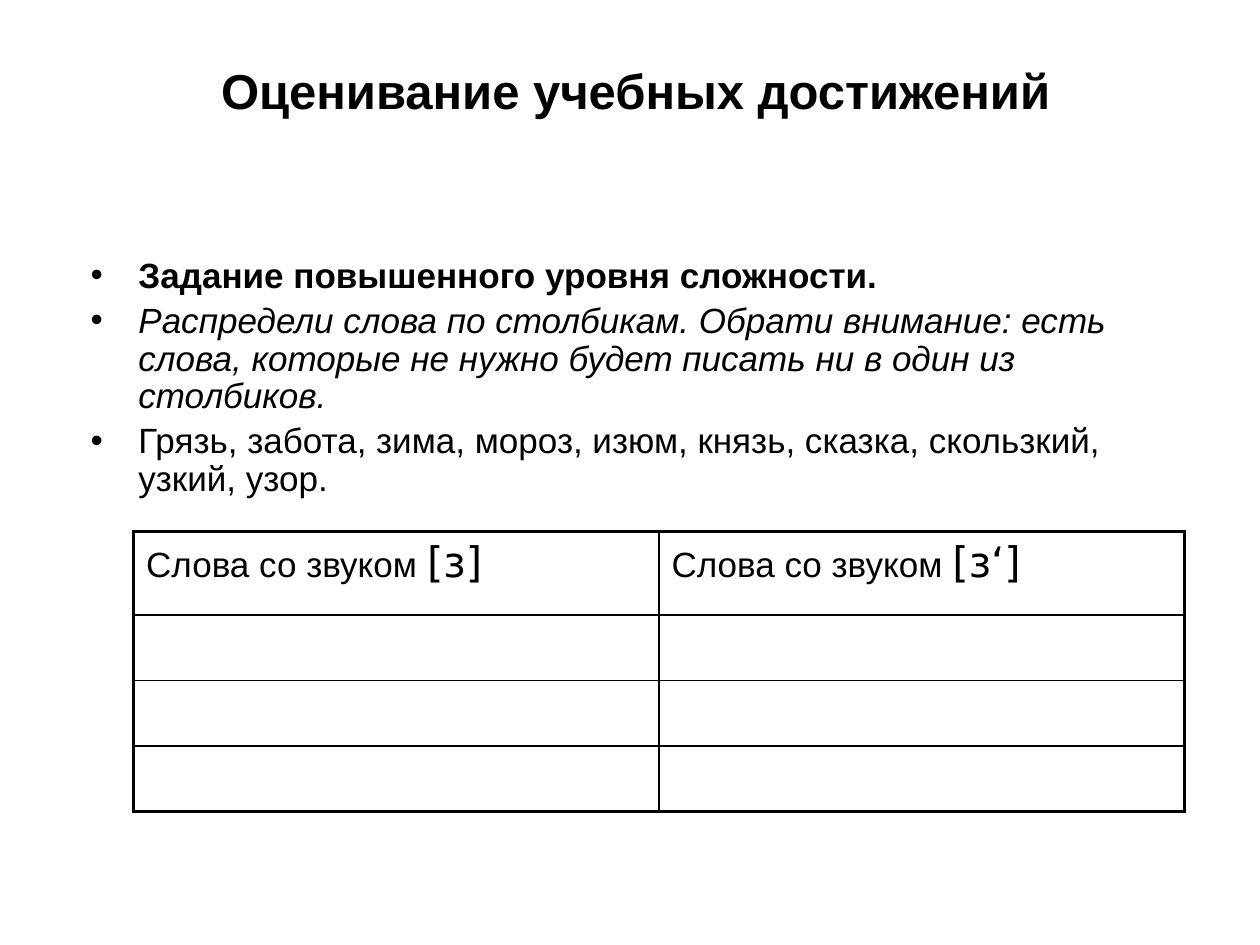
from lxml.etree import SubElement
from pptx import Presentation
from pptx.dml.color import RGBColor
from pptx.enum.text import MSO_ANCHOR, PP_ALIGN
from pptx.oxml.ns import qn
from pptx.util import Inches, Pt

BLACK = RGBColor(0, 0, 0)
TITLE = "Оценивание учебных достижений"
TASKS = [
    ("Задание повышенного уровня сложности.", True, False),
    ("Распредели слова по столбикам. Обрати внимание: есть слова, "
     "которые не нужно будет писать ни в один из столбиков.", False, True),
    ("Грязь, забота, зима, мороз, изюм, князь, сказка, скользкий, "
     "узкий, узор.", False, False),
]
HEADS = ["[з]", "[з‘]"]
LABEL = "Слова со звуком "
ROWS = [0.66, 0.52, 0.52, 0.52]
COL = 4.17
THICK, THIN = 2.25, 1


def style(font, size, name="Arial", bold=False, italic=False):
    font.size, font.name = Pt(size), name
    font.bold, font.italic = bold, italic
    font.color.rgb = BLACK


def add_box(left, top, width, height):
    box = slide.shapes.add_textbox(*map(Inches, (left, top, width, height)))
    box.text_frame.word_wrap = True
    return box.text_frame


def add_bullet(para):
    props = para._p.get_or_add_pPr()
    props.set("marL", str(Inches(0.38)))
    props.set("indent", str(-Inches(0.38)))
    SubElement(props, qn("a:buFont"), typeface="Arial")
    SubElement(props, qn("a:buChar"), char="•")


def add_edges(cell, row, col):
    outer = {"lnL": col == 0, "lnR": col == len(HEADS) - 1,
             "lnT": row == 0, "lnB": row == len(ROWS) - 1}
    props = cell._tc.get_or_add_tcPr()
    for index, (tag, edge) in enumerate(outer.items()):
        width = Pt(THICK if edge else THIN)
        line = props.makeelement(qn("a:" + tag), {"w": str(width)})
        fill = SubElement(line, qn("a:solidFill"))
        SubElement(fill, qn("a:srgbClr"), val=str(BLACK))
        props.insert(index, line)


deck = Presentation()
deck.slide_width, deck.slide_height = Inches(10), Inches(7.5)
slide = deck.slides.add_slide(deck.slide_layouts[6])

head = add_box(0.67, 0.36, 8.75, 0.71)
head.vertical_anchor = MSO_ANCHOR.MIDDLE
head.text = TITLE
head.paragraphs[0].alignment = PP_ALIGN.CENTER
style(head.paragraphs[0].runs[0].font, 28, bold=True)

body = add_box(0.62, 2, 8.75, 2.1)
body.text = "\n".join(text for text, _, _ in TASKS)
for index, (para, (_, bold, italic)) in enumerate(zip(body.paragraphs, TASKS)):
    add_bullet(para)
    para.line_spacing = 0.9
    para.space_before = Pt(4 if index else 0)
    style(para.runs[0].font, 20, bold=bold, italic=italic)

frame = slide.shapes.add_table(
    len(ROWS), len(HEADS), Inches(1.06), Inches(4.22),
    Inches(COL * len(HEADS)), Inches(sum(ROWS)))
table = frame.table
table.first_row = table.horz_banding = False
for col in table.columns:
    col.width = Inches(COL)
for r, height in enumerate(ROWS):
    table.rows[r].height = Inches(height)
    for c, sound in enumerate(HEADS):
        cell = table.cell(r, c)
        cell.fill.background()
        add_edges(cell, r, c)
        if r == 0:
            para = cell.text_frame.paragraphs[0]
            para.text = LABEL
            style(para.runs[0].font, 20)
            run = para.add_run()
            run.text = sound
            style(run.font, 24, "DejaVu Sans")

deck.save("out.pptx")
